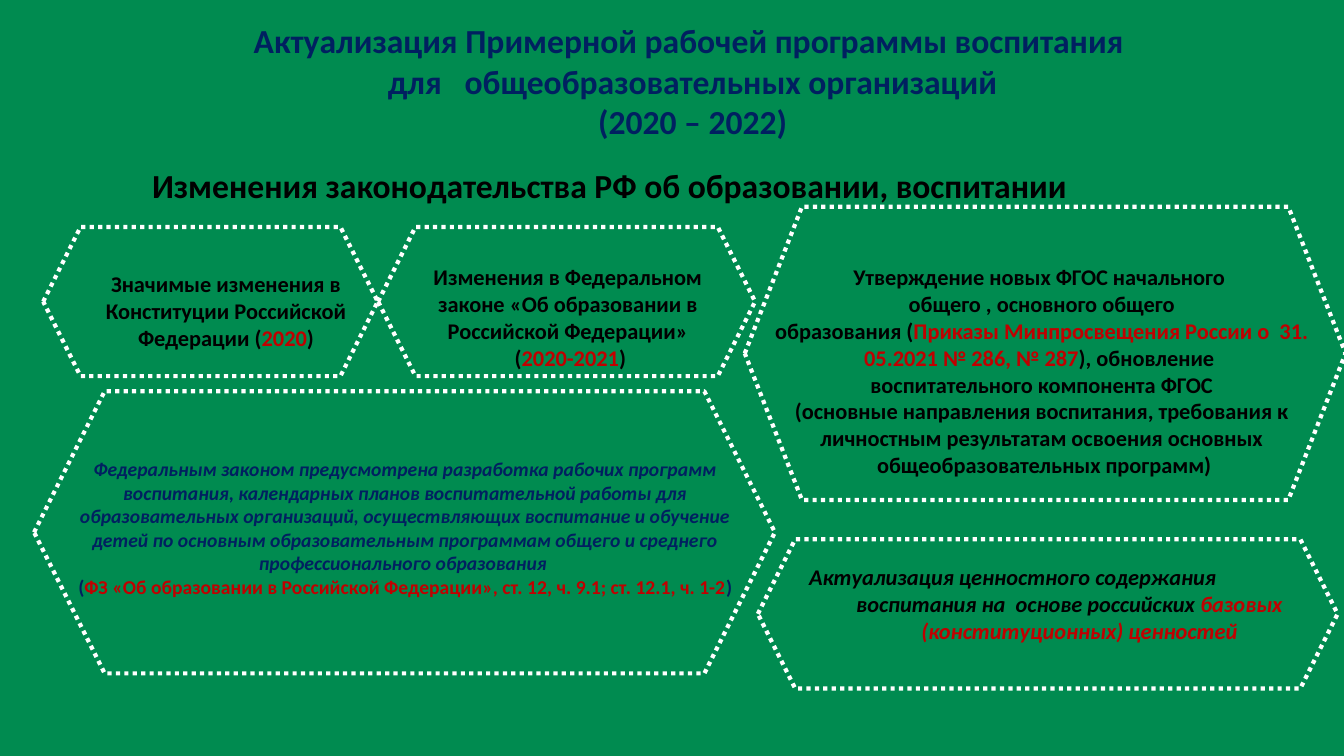
from dataclasses import dataclass

from pptx import Presentation
from pptx import util as u
from pptx.dml.color import RGBColor
from pptx.enum import dml, shapes, text


@dataclass(frozen=True)
class Theme:
    font: str = "Calibri"
    back: str = "008B50"
    line: str = "FFFFFF"
    navy: str = "002060"
    black: str = "000000"
    red: str = "C00000"
    title: int = 24
    body: int = 16
    note: int = 14


T = Theme()


def cm(box):
    return [u.Cm(v) for v in box]


def write(tf, paras, size=T.body, color=T.black, italic=False, first_left=False, indents=()):
    """Each paragraph is a list of runs: a string, or (string, format changes)."""
    tf.word_wrap = True
    tf.auto_size = text.MSO_AUTO_SIZE.NONE
    tf.vertical_anchor = text.MSO_ANCHOR.TOP
    for i, runs in enumerate(paras):
        p = tf.paragraphs[0] if i == 0 else tf.add_paragraph()
        left = first_left and i == 0
        p.alignment = text.PP_ALIGN.LEFT if left else text.PP_ALIGN.CENTER
        if i < len(indents):
            pPr = p._p.get_or_add_pPr()
            pPr.set("marL", str(u.Cm(indents[i])))
            pPr.set("indent", "0")
        for run in runs:
            words, changes = (run, {}) if isinstance(run, str) else run
            r = p.add_run()
            r.text = words
            r.font.name = T.font
            r.font.size = u.Pt(size)
            r.font.bold = True
            r.font.italic = changes.get("italic", italic)
            r.font.color.rgb = RGBColor.from_string(changes.get("color", color))


def textbox(s, box, paras, **fmt):
    sp = s.shapes.add_textbox(*cm(box))
    write(sp.text_frame, paras, **fmt)


def heading(s, box):
    """Title at the top of the box, subtitle below it."""
    x, y, w, h = box
    title = s.shapes.title
    title.left, title.top, title.width, title.height = cm((x, y, w, 3.33))
    write(title.text_frame, [
        ["Актуализация Примерной рабочей программы воспитания "],
        ["для   общеобразовательных организаций"],
        ["(2020 – 2022)"],
    ], size=T.title, color=T.navy)
    textbox(s, (x, y + 3.65, 26.8, h - 3.65),
            [["Изменения законодательства РФ об образовании, воспитании"]], size=T.title)


def card(s, box, inset, paras, adj=0.25, **fmt):
    """Dotted hexagon with text; inset is dx, dy, width, height within the box."""
    sp = s.shapes.add_shape(shapes.MSO_SHAPE.HEXAGON, *cm(box))
    sp.adjustments[0] = adj
    sp.shadow.inherit = False
    sp.fill.background()
    sp.line.color.rgb = RGBColor.from_string(T.line)
    sp.line.width = u.Pt(3)
    sp.line.dash_style = dml.MSO_LINE.ROUND_DOT
    dx, dy, w, h = inset
    textbox(s, (box[0] + dx, box[1] + dy, w, h), paras, **fmt)


def law_changes(s):
    red = {"color": T.red}
    # Constitution
    card(s, (1.09, 5.72, 8.43, 3.76), (0.86, 0.97, 7.49, 2.31), [
        ["Значимые изменения в Конституции Российской Федерации (", ("2020", red), ")"],
    ])
    # Federal law
    card(s, (9.53, 5.72, 9.5, 3.76), (0.69, 0.79, 8.31, 3), [
        ["Изменения в Федеральном "],
        ["законе «Об образовании в  Российской Федерации» "],
        ["(", ("2020-2021", red), ")"],
    ])
    # What the federal law requires
    card(s, (0.86, 9.86, 18.67, 7.11), (0.81, 1.53, 17.09, 3.85), [
        ["Федеральным законом предусмотрена разработка рабочих программ воспитания, "
         "календарных планов воспитательной работы для образовательных организаций, "
         "осуществляющих воспитание и обучение детей по основным образовательным "
         "программам общего и среднего профессионального образования "],
        [("(", {"italic": False}),
         ("ФЗ «Об образовании в Российской Федерации», ст. 12, ч. 9.1; ст. 12.1, ч. 1-2",
          {"color": T.red, "italic": False}),
         (")", {"italic": False})],
    ], size=T.note, color=T.navy, italic=True)


def standards(s):
    red = {"color": T.red}
    # New education standards
    card(s, (18.77, 5.21, 15.14, 7.39), (0.46, 1.3, 14.05, 5.74), [
        ["Утверждение новых ФГОС начального "],
        ["общего , основного общего"],
        ["образования (",
         ("Приказы Минпросвещения России о  31. 05.2021 № 286, № 287", red),
         "), обновление "],
        ["воспитательного компонента ФГОС"],
        ["(основные направления воспитания, требования к личностным результатам "
         "освоения основных"],
        [" общеобразовательных программ)"],
    ], adj=0.195)
    # Values
    card(s, (19.1, 13.59, 14.61, 3.76), (1.04, 0.48, 12.98, 2.31), [
        ["Актуализация ценностного содержания"],
        ["воспитания на  основе российских ", ("базовых", red)],
        [("(конституционных) ценностей", red)],
    ], italic=True, first_left=True, indents=(0, 0.64, 1.15))


def main():
    prs = Presentation()
    prs.slide_width, prs.slide_height = u.Cm(33.87), u.Cm(19.05)
    s = prs.slides.add_slide(prs.slide_layouts[5])
    s.background.fill.solid()
    s.background.fill.fore_color.rgb = RGBColor.from_string(T.back)
    heading(s, (1.96, 0.38, 30.99, 4.95))
    law_changes(s)
    standards(s)
    prs.save("out.pptx")


if __name__ == "__main__":
    main()
